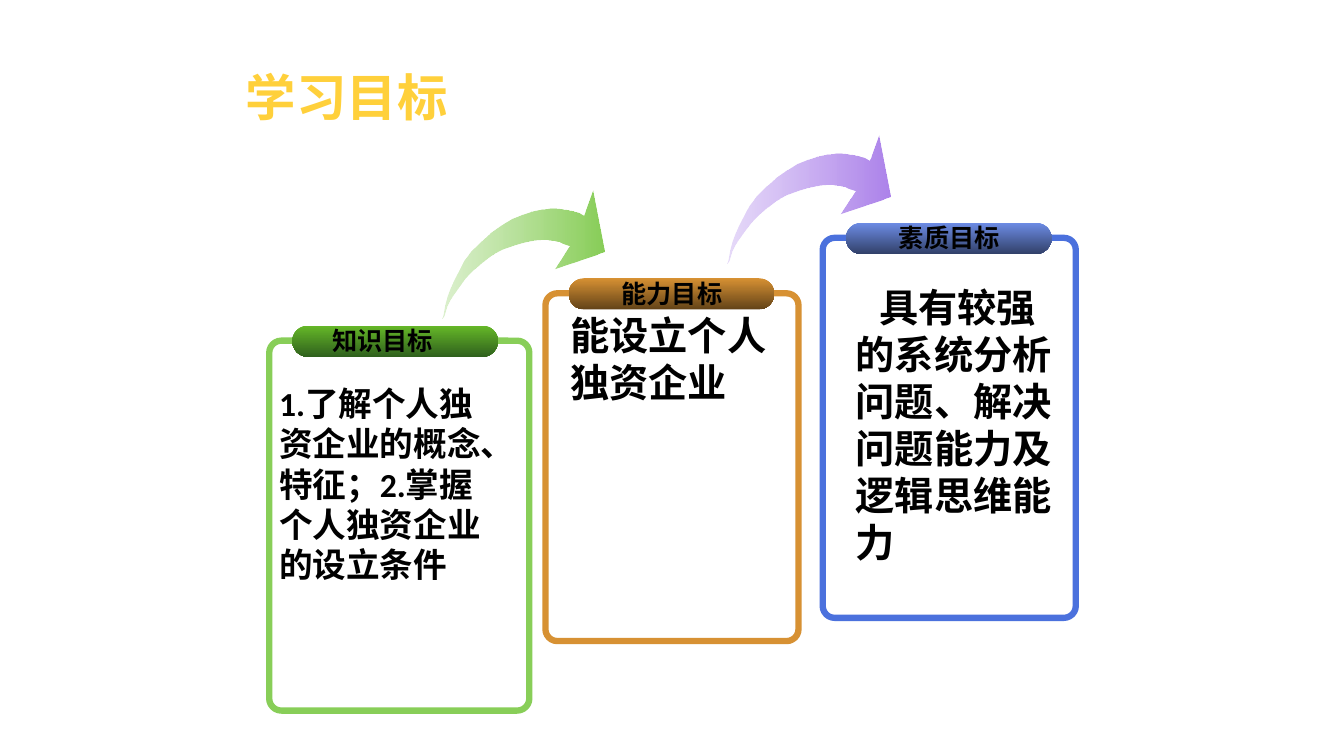
from lxml import etree
from pptx import Presentation
from pptx.dml.color import RGBColor
from pptx.enum.shapes import MSO_SHAPE
from pptx.enum.text import MSO_ANCHOR, PP_ALIGN
from pptx.oxml.ns import qn
from pptx.util import Inches, Pt

ROUNDED = MSO_SHAPE.ROUNDED_RECTANGLE
TOP, MIDDLE = MSO_ANCHOR.TOP, MSO_ANCHOR.MIDDLE
LEFT, CENTER = PP_ALIGN.LEFT, PP_ALIGN.CENTER
LATIN, CJK = "Calibri", "Noto Sans CJK SC"

BLACK = RGBColor(0x00, 0x00, 0x00)
YELLOW = RGBColor(0xFF, 0xD0, 0x3B)
GREEN = RGBColor(0x88, 0xCE, 0x58)
GREEN_PALE = RGBColor(0x93, 0xD2, 0x67)
GREEN_TOP = RGBColor(0x66, 0xB8, 0x28)
GREEN_DARK = RGBColor(0x2F, 0x61, 0x1D)
ORANGE = RGBColor(0xD7, 0x91, 0x33)
ORANGE_DARK = RGBColor(0x63, 0x43, 0x18)
BLUE = RGBColor(0x4B, 0x71, 0xDD)
BLUE_TOP = RGBColor(0x6D, 0x8C, 0xE5)
BLUE_DARK = RGBColor(0x32, 0x41, 0x6A)
PURPLE = RGBColor(0xAD, 0x83, 0xEB)
PURPLE_PALE = RGBColor(0xB4, 0x8E, 0xED)

ARROW_SIZE = (1.61, 1.27)
ARROW_OUTLINE = [
    (0, 1.27), (0.02, 1.24), (0.05, 1.14), (0.08, 1.08), (0.13, 1.01),
    (0.18, 0.94), (0.23, 0.87), (0.31, 0.79), (0.39, 0.72), (0.48, 0.65),
    (0.59, 0.59), (0.7, 0.55), (0.8, 0.52), (0.89, 0.5), (0.97, 0.49),
    (1.04, 0.49), (1.11, 0.5), (1.16, 0.51), (1.2, 0.53), (1.26, 0.55),
    (1.11, 0.78), (1.61, 0.61), (1.49, 0), (1.4, 0.25), (1.35, 0.22),
    (1.26, 0.2), (1.2, 0.19), (1.13, 0.18), (1.06, 0.18), (0.98, 0.19),
    (0.88, 0.21), (0.79, 0.24), (0.69, 0.28), (0.58, 0.35), (0.48, 0.42),
    (0.38, 0.51), (0.29, 0.6), (0.22, 0.69), (0.17, 0.79), (0.12, 0.88),
    (0.08, 0.97), (0.05, 1.05), (0.03, 1.12), (0.01, 1.23),
]


def add_text(s, text, box, size=18, color=BLACK, font=LATIN, align=LEFT,
             anchor=TOP, wrap=True, spacing=None, indent=0):
    tf = s.shapes.add_textbox(*map(Inches, box)).text_frame
    tf.word_wrap = wrap
    tf.vertical_anchor = anchor
    p = tf.paragraphs[0]
    p.alignment = align
    if spacing:
        p.line_spacing = spacing
    if indent:
        pPr = p._p.get_or_add_pPr()
        pPr.set("marL", "0")
        pPr.set("indent", str(Inches(indent)))
    r = p.add_run()
    r.text = text
    r.font.size = Pt(size)
    r.font.bold = True
    r.font.name = font
    r.font.color.rgb = color
    etree.SubElement(r._r.get_or_add_rPr(), qn("a:ea")).set("typeface", CJK)


def fill_gradient(sp, start, end, angle, start_alpha=None):
    sp.shadow.inherit = False
    sp.line.fill.background()
    sp.fill.gradient()
    sp.fill.gradient_angle = angle
    stops = sp.fill.gradient_stops
    for stop, color, position in zip(stops, (start, end), (0, 1)):
        stop.color.rgb = color
        stop.position = position
    if start_alpha:
        first = next(sp._element.spPr.iter(qn("a:srgbClr")))
        etree.SubElement(first, qn("a:alpha")).set("val", str(start_alpha * 1000))


def add_card(s, box, color, pill_colors, label, label_dx, body, body_box, size, indent=0):
    left, top, width, height = box
    sp = s.shapes.add_shape(ROUNDED, *map(Inches, box))
    sp.adjustments[0] = 0.047
    sp.shadow.inherit = False
    sp.fill.background()
    sp.line.color.rgb = color
    sp.line.width = Pt(4.5)

    pill_box = (left + 0.23, top - 0.15, 2.04, 0.31)
    pill = s.shapes.add_shape(ROUNDED, *map(Inches, pill_box))
    pill.adjustments[0] = 0.5
    fill_gradient(pill, *pill_colors, angle=270)

    add_text(s, label, (left + label_dx, top - 0.2, 1.21, 0.4), align=CENTER, wrap=False)
    dx, dy, body_width, body_height = body_box
    add_text(s, body, (left + dx, top + dy, body_width, body_height), size=size, indent=indent)


def add_arrow(s, box, pale, color):
    left, top, width, height = box
    sx, sy = width / ARROW_SIZE[0], height / ARROW_SIZE[1]
    points = [(Inches(left + x * sx), Inches(top + y * sy)) for x, y in ARROW_OUTLINE]
    builder = s.shapes.build_freeform(*points[0], scale=1.0)
    builder.add_line_segments(points[1:], close=True)
    fill_gradient(builder.convert_to_shape(), pale, color, angle=0, start_alpha=32)


def main():
    prs = Presentation()
    prs.slide_width, prs.slide_height = Inches(13.33), Inches(7.5)
    s = prs.slides.add_slide(prs.slide_layouts[6])

    add_text(s, "学习目标", (2.34, 0.64, 8.66, 0.71), size=36, color=YELLOW,
             font=CJK, anchor=MIDDLE, spacing=0.9)
    add_card(s, (2.67, 3.38, 2.58, 3.67), GREEN, (GREEN_TOP, GREEN_DARK), "知识目标", 0.52,
             "1.了解个人独资企业的概念、特征；2.掌握个人独资企业的设立条件",
             (0, 0.37, 2.27, 2.1), 24)
    add_card(s, (5.41, 2.91, 2.51, 3.45), ORANGE, (ORANGE, ORANGE_DARK), "能力目标", 0.65,
             "能设立个人独资企业", (0.15, 0.13, 2.27, 1.03), 28)
    add_card(s, (8.16, 2.36, 2.51, 3.77), BLUE, (BLUE_TOP, BLUE_DARK), "素质目标", 0.65,
             "具有较强的系统分析问题、解决问题能力及逻辑思维能力",
             (0.23, 0.4, 2.27, 3.37), 28, indent=0.23)
    add_arrow(s, (4.39, 1.89, *ARROW_SIZE), GREEN_PALE, GREEN)
    add_arrow(s, (7.22, 1.34, *ARROW_SIZE), PURPLE_PALE, PURPLE)

    prs.save("out.pptx")


if __name__ == "__main__":
    main()
